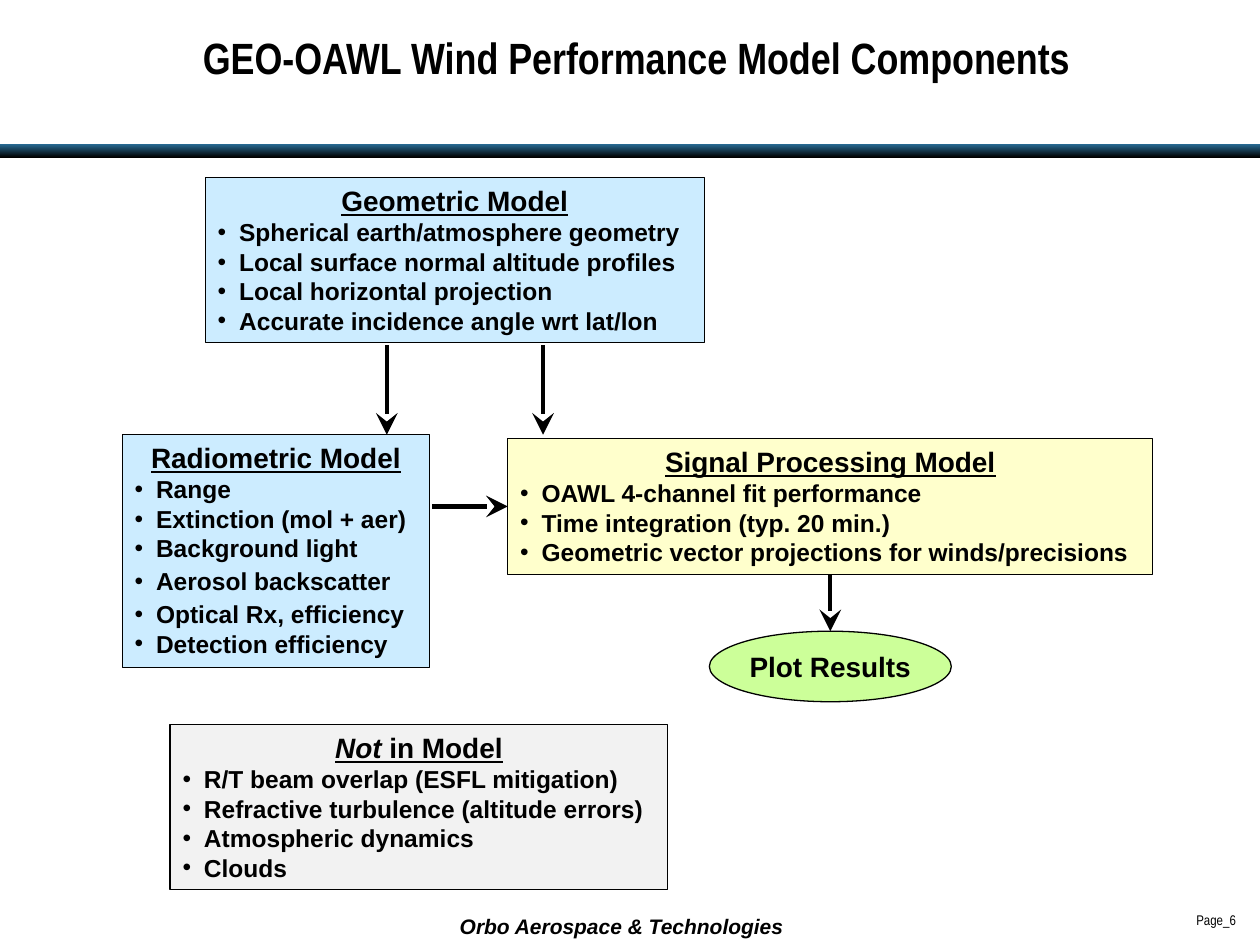
from dataclasses import dataclass

from lxml import etree
from pptx import Presentation
from pptx.dml.color import RGBColor
from pptx.enum.shapes import MSO_CONNECTOR, MSO_SHAPE
from pptx.enum.text import MSO_ANCHOR, PP_ALIGN
from pptx.oxml.ns import qn
from pptx.util import Inches, Pt

RECTANGLE, OVAL = MSO_SHAPE.RECTANGLE, MSO_SHAPE.OVAL
STRAIGHT, ELBOW = MSO_CONNECTOR.STRAIGHT, MSO_CONNECTOR.ELBOW
LEFT, CENTER, RIGHT = PP_ALIGN.LEFT, PP_ALIGN.CENTER, PP_ALIGN.RIGHT
TOP, MIDDLE = MSO_ANCHOR.TOP, MSO_ANCHOR.MIDDLE
TOP_SITE, LEFT_SITE, BOTTOM_SITE = 0, 1, 2

WIDTH, HEIGHT = Inches(10), Inches(7.5)
COLUMNS, ROWS = 100, 75
TITLE_ONLY_LAYOUT = 5
BULLET_INDENT = Inches(0.17)
COLORS = {
    "ink": "000000",
    "band": "296F99",
    "input": "CCECFF",
    "processing": "FFFFCC",
    "result": "CCFF99",
    "excluded": "F2F2F2",
}


@dataclass(frozen=True)
class Area:
    column: float
    row: float
    columns: float
    rows: float


@dataclass(frozen=True)
class ModelBox:
    area: Area
    color: str
    heading: tuple[str, ...]
    items: tuple[str, ...]
    spaced: tuple[str, ...] = ()


GEOMETRIC = ModelBox(
    Area(16.3, 14.1, 39.6, 13.1), "input", ("Geometric Model",),
    ("Spherical earth/atmosphere geometry",
     "Local surface normal altitude profiles",
     "Local horizontal projection",
     "Accurate incidence angle wrt lat/lon"))
RADIOMETRIC = ModelBox(
    Area(9.7, 34.5, 24.4, 18.5), "input", ("Radiometric Model",),
    ("Range", "Extinction (mol + aer)", "Background light",
     "Aerosol backscatter", "Optical Rx, efficiency",
     "Detection efficiency"),
    spaced=("Aerosol backscatter", "Optical Rx, efficiency"))
SIGNAL = ModelBox(
    Area(40.3, 34.8, 51.2, 10.8), "processing", ("Signal Processing Model",),
    ("OAWL 4-channel fit performance",
     "Time integration (typ. 20 min.)",
     "Geometric vector projections for winds/precisions"))
NOT_IN_MODEL = ModelBox(
    Area(13.5, 57.5, 39.5, 13.1), "excluded", ("Not", " in Model"),
    ("R/T beam overlap (ESFL mitigation)",
     "Refractive turbulence (altitude errors)",
     "Atmospheric dynamics",
     "Clouds"))


def x(columns: float) -> int:
    return round(WIDTH * columns / COLUMNS)


def y(rows: float) -> int:
    return round(HEIGHT * rows / ROWS)


def place(area: Area) -> tuple[int, int, int, int]:
    return x(area.column), y(area.row), x(area.columns), y(area.rows)


def rgb(name: str) -> RGBColor:
    return RGBColor.from_string(COLORS[name])


def format_font(font, size: float, name: str = "Arial", bold: bool = True,
                italic: bool = False, underline: bool = False) -> None:
    font.size, font.name = Pt(size), name
    font.bold, font.italic, font.underline = bold, italic, underline
    font.color.rgb = rgb("ink")


def add_bullet(paragraph) -> None:
    properties = paragraph._p.get_or_add_pPr()
    properties.set("marL", str(BULLET_INDENT))
    properties.set("indent", str(-BULLET_INDENT))
    etree.SubElement(properties, qn("a:buFont")).set("typeface", "Arial")
    etree.SubElement(properties, qn("a:buChar")).set("char", "•")


def add_outlined(slide, kind, area: Area, color: str):
    shape = slide.shapes.add_shape(kind, *place(area))
    shape.shadow.inherit = False
    shape.fill.solid()
    shape.fill.fore_color.rgb = rgb(color)
    shape.line.color.rgb = rgb("ink")
    shape.line.width = Pt(0.75)
    return shape


def add_model(slide, model: ModelBox):
    shape = add_outlined(slide, RECTANGLE, model.area, model.color)
    frame = shape.text_frame
    frame.word_wrap, frame.vertical_anchor = True, TOP
    heading = frame.paragraphs[0]
    heading.alignment = CENTER
    for text in model.heading:
        run = heading.add_run()
        run.text = text
        format_font(run.font, 16, italic=text == "Not", underline=True)
    for item in model.items:
        paragraph = frame.add_paragraph()
        paragraph.text = item
        paragraph.level, paragraph.alignment = 1, LEFT
        if item in model.spaced:
            paragraph.space_before = Pt(2)
        add_bullet(paragraph)
        format_font(paragraph.runs[0].font, 14)
    return shape


def add_arrow(slide, start: tuple[float, float], end: tuple[float, float],
              kind=STRAIGHT):
    arrow = slide.shapes.add_connector(
        kind, x(start[0]), y(start[1]), x(end[0]), y(end[1]))
    arrow.line.color.rgb = rgb("ink")
    arrow.line.width = Pt(2.5)
    head = etree.SubElement(arrow.line._get_or_add_ln(), qn("a:tailEnd"))
    for name, value in (("type", "stealth"), ("w", "lg"), ("len", "lg")):
        head.set(name, value)
    etree.SubElement(arrow._element.spPr, qn("a:effectLst"))
    return arrow


def add_label(slide, area: Area, text: str, alignment):
    frame = slide.shapes.add_textbox(*place(area)).text_frame
    frame.text = text
    frame.word_wrap, frame.vertical_anchor = True, MIDDLE
    frame.paragraphs[0].alignment = alignment
    return frame


def add_title(slide, area: Area, text: str) -> None:
    title = slide.shapes.title
    title.left, title.top, title.width, title.height = place(area)
    frame = title.text_frame
    frame.text = text
    frame.vertical_anchor = TOP
    frame.paragraphs[0].alignment = CENTER
    format_font(frame.paragraphs[0].runs[0].font, 25, "Arial Narrow")


def add_band(slide, area: Area) -> None:
    band = slide.shapes.add_shape(RECTANGLE, *place(area))
    band.shadow.inherit = False
    band.line.fill.background()
    band.fill.gradient()
    band.fill.gradient_angle = 270
    for stop, color in zip(band.fill.gradient_stops, ("band", "ink")):
        stop.color.rgb = rgb(color)


def main() -> None:
    presentation = Presentation()
    presentation.slide_width, presentation.slide_height = WIDTH, HEIGHT
    slide = presentation.slides.add_slide(
        presentation.slide_layouts[TITLE_ONLY_LAYOUT])

    add_band(slide, Area(0, 11.4, COLUMNS, 1.1))
    add_title(slide, Area(11.8, 1.9, 77.4, 8.6),
              "GEO-OAWL Wind Performance Model Components")

    for model in (RADIOMETRIC, GEOMETRIC, NOT_IN_MODEL):
        add_model(slide, model)
    signal = add_model(slide, SIGNAL)

    results = add_outlined(slide, OVAL, Area(56.3, 50.1, 19.2, 5.6), "result")
    results.text_frame.text = "Plot Results"
    results.text_frame.word_wrap = False
    results.text_frame.vertical_anchor = MIDDLE
    results.text_frame.paragraphs[0].alignment = CENTER
    format_font(results.text_frame.paragraphs[0].runs[0].font, 16)

    for column in (30.7, 43.1):
        add_arrow(slide, (column, 27.4), (column, 34.5))
    to_signal = add_arrow(slide, (34.3, 40.2), (40.3, 40.2), ELBOW)
    to_signal.end_connect(signal, LEFT_SITE)
    to_results = add_arrow(slide, (65.9, 45.6), (65.9, 50.1))
    to_results.begin_connect(signal, BOTTOM_SITE)
    to_results.end_connect(results, TOP_SITE)

    footer = add_label(slide, Area(35.5, 72, 29.5, 3),
                       "Orbo Aerospace & Technologies", LEFT)
    format_font(footer.paragraphs[0].runs[0].font, 12, italic=True)

    page = add_label(slide, Area(86.4, 72.1, 12.1, 1.8), "Page_6", RIGHT)
    page.margin_left = page.margin_right = Inches(0.04)
    page.margin_top = page.margin_bottom = Inches(0.04)
    format_font(page.paragraphs[0].runs[0].font, 8, "Arial Narrow", bold=False)

    presentation.save("out.pptx")


if __name__ == "__main__":
    main()
